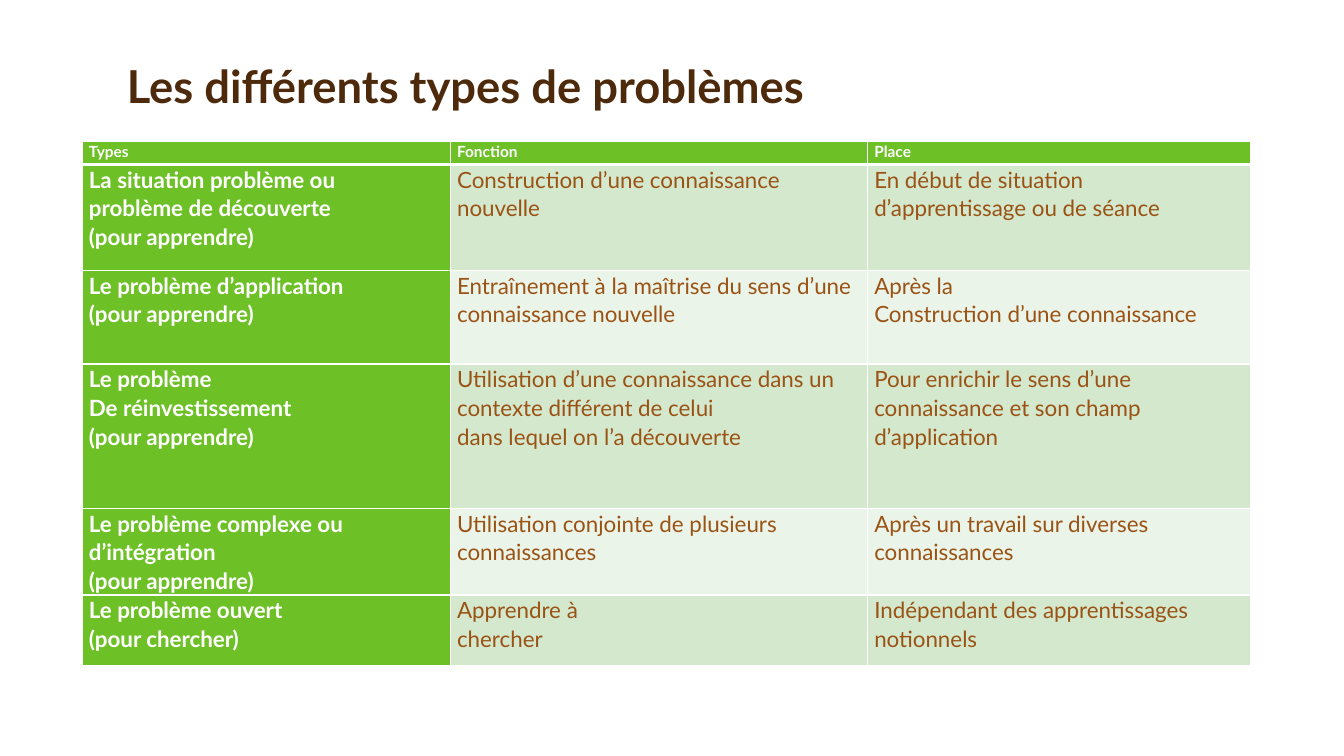
from dataclasses import dataclass

from lxml.etree import SubElement
from pptx import Presentation
from pptx.dml.color import RGBColor
from pptx.enum.text import MSO_ANCHOR
from pptx.oxml.ns import qn
from pptx.util import Pt


@dataclass(frozen=True)
class Theme:
    font: str = "Lato"
    title_color: str = "4D2A0B"
    body_color: str = "9A5315"
    white: str = "FFFFFF"
    green: str = "6DC025"
    bands: tuple = ("D4E8CD", "EBF4E8")
    title_size: float = 32.4
    header_size: float = 11
    body_size: float = 16


class SlideBuilder:
    def __init__(self, slide, theme):
        self.slide = slide
        self.theme = theme

    def fill_text(self, text_frame, text, size, color, bold, spacing):
        """Fill a text frame, one paragraph per line of text."""
        text_frame.text = text
        text_frame.word_wrap = True
        for paragraph in text_frame.paragraphs:
            paragraph.line_spacing = spacing
            for run in paragraph.runs:
                run.font.name = self.theme.font
                run.font.size = Pt(size)
                run.font.bold = bold
                run.font.color.rgb = RGBColor.from_string(color)

    def title(self, text, left, top, width, height):
        shape = self.slide.shapes.add_textbox(Pt(left), Pt(top), Pt(width), Pt(height))
        shape.text_frame.vertical_anchor = MSO_ANCHOR.BOTTOM
        self.fill_text(shape.text_frame, text, self.theme.title_size,
                       self.theme.title_color, True, 0.9)

    def borders(self, cell, top, bottom):
        """Draw white lines on the four sides; they come first in the cell properties."""
        properties = cell._tc.get_or_add_tcPr()
        sides = (("lnL", 1), ("lnR", 1), ("lnT", top), ("lnB", bottom))
        for position, (side, width) in enumerate(sides):
            line = SubElement(properties, qn(f"a:{side}"), w=str(Pt(width)))
            fill = SubElement(line, qn("a:solidFill"))
            SubElement(fill, qn("a:srgbClr"), val=self.theme.white)
            properties.insert(position, line)

    def cell(self, cell, text, row, column):
        theme = self.theme
        is_heading = row == 0 or column == 0
        cell.margin_left = cell.margin_right = Pt(5)
        cell.margin_top = cell.margin_bottom = Pt(0)
        cell.fill.solid()
        cell.fill.fore_color.rgb = RGBColor.from_string(
            theme.green if is_heading else theme.bands[(row - 1) % 2])
        self.fill_text(cell.text_frame, text,
                       theme.header_size if row == 0 else theme.body_size,
                       theme.white if is_heading else theme.body_color,
                       is_heading, 1.07)
        self.borders(cell, top=3 if row == 1 else 1, bottom=3 if row == 0 else 1)

    def table(self, rows, left, top, widths, heights):
        table = self.slide.shapes.add_table(
            len(heights), len(widths), Pt(left), Pt(top),
            Pt(sum(widths)), Pt(sum(heights))).table
        for column, width in zip(table.columns, widths):
            column.width = Pt(width)
        for table_row, height in zip(table.rows, heights):
            table_row.height = Pt(height)
        for row, texts in enumerate(rows):
            for column, text in enumerate(texts):
                self.cell(table.cell(row, column), text, row, column)


PROBLEM_TYPES = [
    ("Types", "Fonction", "Place"),
    ("La situation problème ou\nproblème de découverte\n(pour apprendre)",
     "Construction d’une connaissance nouvelle",
     "En début de situation\nd’apprentissage ou de séance"),
    ("Le problème d’application\n(pour apprendre)",
     "Entraînement à la maîtrise du sens d’une connaissance nouvelle",
     "Après la\nConstruction d’une connaissance"),
    ("Le problème\nDe réinvestissement\n(pour apprendre)",
     "Utilisation d’une connaissance dans un contexte différent de celui\n"
     "dans lequel on l’a découverte",
     "Pour enrichir le sens d’une\nconnaissance et son champ\nd’application"),
    ("Le problème complexe ou d’intégration\n(pour apprendre)",
     "Utilisation conjointe de plusieurs\nconnaissances",
     "Après un travail sur diverses connaissances"),
    ("Le problème ouvert\n(pour chercher)",
     "Apprendre à\nchercher",
     "Indépendant des apprentissages\nnotionnels"),
]


def main():
    presentation = Presentation()
    presentation.slide_width = Pt(960)
    presentation.slide_height = Pt(540)
    slide = presentation.slides.add_slide(presentation.slide_layouts[6])
    builder = SlideBuilder(slide, Theme())

    # Title
    builder.title("Les différents types de problèmes", 83.5, 24, 784, 60.5)

    # Table of problem types
    builder.table(PROBLEM_TYPES, 58.5, 101, widths=(263, 298, 274),
                  heights=(16.5, 75.5, 67, 103, 62, 50.5))

    presentation.save("out.pptx")


if __name__ == "__main__":
    main()
